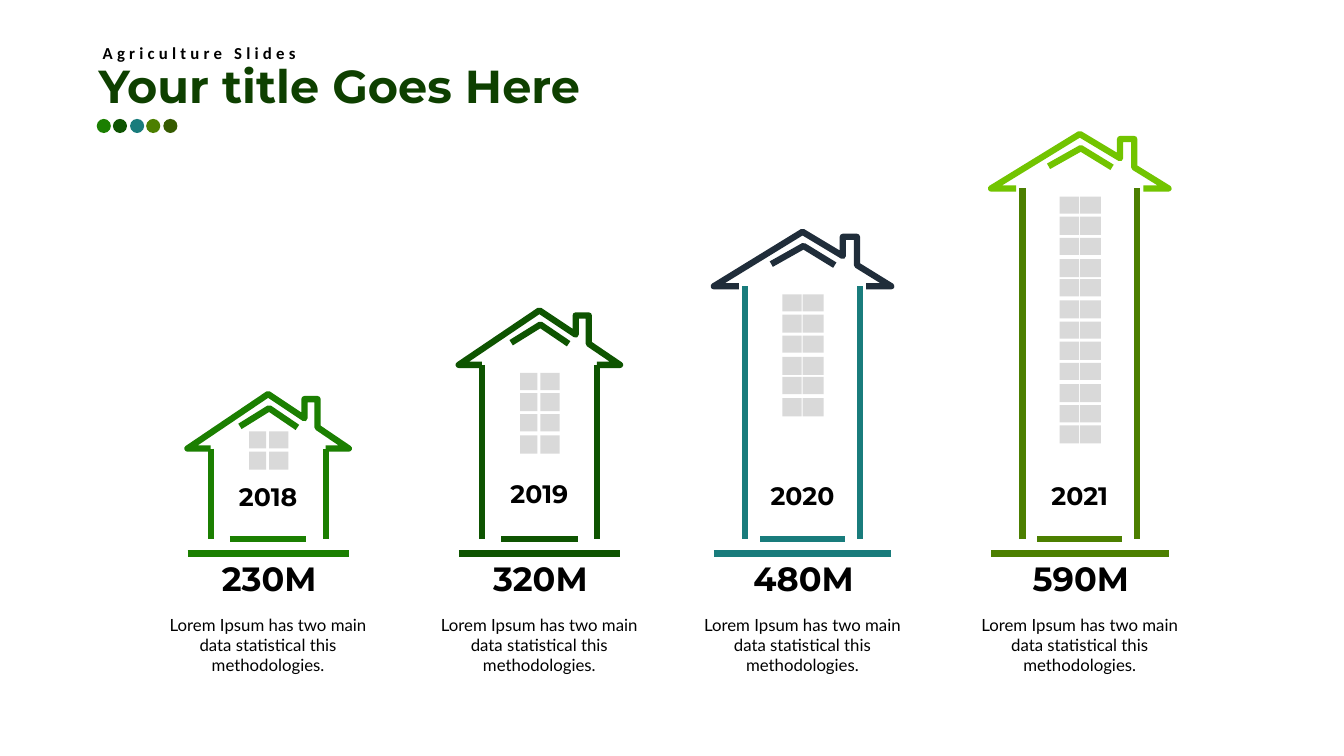
from dataclasses import dataclass

from lxml import etree
from pptx import Presentation
from pptx import util as u
from pptx.dml.color import RGBColor
from pptx.enum import shapes, text
from pptx.oxml import ns

SCALE = 9144  # EMU in one px, 100 px to the inch


@dataclass(frozen=True)
class Theme:
    ink: str = "000000"
    title: str = "0E4000"
    pane: str = "D9D9D9"
    dots: tuple[str, ...] = ("1B7F01", "0E5401", "197C7C", "4C7F00", "355B00")
    head: str = "Montserrat"
    body: str = "Lato"
    label: str = "Calibri"
    big: int = 33
    amount: int = 24
    year: int = 18
    small: int = 12
    stroke: float = 4.5


@dataclass(frozen=True)
class House:
    year: str
    amount: str
    mid: int      # centre line
    eave: int     # foot of the roof
    wall: str
    roof: str
    rows: int     # rows of windows
    top: int      # first row of windows
    year_y: int
    girth: int    # roof and base width in percent
    panes: tuple[tuple[int, int], ...]  # left offset and width


THEME = Theme()
SLIM = ((-19, 17), (1, 19))
WIDE = ((-20, 19), (0, 21))
HOUSES = (
    House("2018", "230M", 266, 445, "1B7F01", "1B7F01", 2, 428, 473, 100, SLIM),
    House("2019", "320M", 535, 362, "0E5401", "0E5401", 4, 370, 470, 100, SLIM),
    House("2020", "480M", 796, 284, "197C7C", "202D3A", 6, 292, 472, 110, WIDE),
    House("2021", "590M", 1071, 187, "4C7F00", "72C400", 12, 195, 472, 110, WIDE),
)
CAPTION = "Lorem Ipsum has two main data statistical this methodologies."

# Outlines measured from the centre line and the eave
ROOF = ((57, 0), (80, 0), (49, -21), (49, -49), (36, -49), (36, -30),
        (0, -54), (-80, 0), (-57, 0))
RAFTER = ((-28, -22), (1, -40), (29, -21))
WALL, BASE, STEP = 57, 80, 38
BASE_Y, STEP_Y = 549, 535

deck = Presentation()
deck.slide_width, deck.slide_height = u.Emu(1333 * SCALE), u.Emu(750 * SCALE)
slide = deck.slides.add_slide(deck.slide_layouts[6])


def px(*vals: int) -> list[u.Emu]:
    return [u.Emu(val * SCALE) for val in vals]


def paint(line, hue: str) -> None:
    line.color.rgb = RGBColor.from_string(hue)
    line.width = u.Pt(THEME.stroke)


def rule(x1: int, y1: int, x2: int, y2: int, hue: str) -> None:
    line = slide.shapes.add_connector(shapes.MSO_CONNECTOR.STRAIGHT, *px(x1, y1, x2, y2))
    paint(line.line, hue)
    etree.SubElement(line._element.spPr, ns.qn("a:effectLst"))


def trace(points: tuple[tuple[int, int], ...], house: House) -> None:
    spots = [(house.mid + round(x * house.girth / 100), house.eave + y) for x, y in points]
    pen = slide.shapes.build_freeform(*spots[0], scale=SCALE)
    pen.add_line_segments(spots[1:], close=False)
    shape = pen.convert_to_shape()
    shape.shadow.inherit = False
    shape.fill.background()
    paint(shape.line, house.roof)


def block(kind: shapes.MSO_SHAPE, x: int, y: int, w: int, h: int, hue: str) -> None:
    shape = slide.shapes.add_shape(kind, *px(x, y, w, h))
    shape.shadow.inherit = False
    shape.fill.solid()
    shape.fill.fore_color.rgb = RGBColor.from_string(hue)
    shape.line.fill.background()


def write(words: str, x: int, y: int, w: int, h: int, face: str, size: int, *,
          bold: bool = True, hue: str = THEME.ink, wrap: bool = False,
          mid: bool = True, gap: int = 0) -> None:
    frame = slide.shapes.add_textbox(*px(x, y, w, h)).text_frame
    frame.word_wrap = wrap
    frame.auto_size = text.MSO_AUTO_SIZE.SHAPE_TO_FIT_TEXT
    para = frame.paragraphs[0]
    para.alignment = text.PP_ALIGN.CENTER if mid else text.PP_ALIGN.LEFT
    run = para.add_run()
    run.text = words
    if gap:
        run._r.get_or_add_rPr().set("spc", str(gap * 100))
    font = para.font
    font.name, font.size, font.bold = face, u.Pt(size), bold
    font.color.rgb = RGBColor.from_string(hue)


def build(house: House) -> None:
    mid, eave = house.mid, house.eave
    # Walls and roof
    for side in (-WALL, WALL):
        rule(mid + side, eave, mid + side, STEP_Y, house.wall)
    trace(ROOF, house)
    trace(RAFTER, house)
    # Ground and doorstep
    for half, y in ((BASE, BASE_Y), (STEP, STEP_Y)):
        reach = round(half * house.girth / 100)
        rule(mid - reach, y, mid + reach, y, house.wall)
    # Windows
    for row in range(house.rows):
        for left, wide in house.panes:
            block(shapes.MSO_SHAPE.RECTANGLE, mid + left, house.top + row * 207 // 10,
                  wide, 17 + row % 2, THEME.pane)
    # Labels
    write(house.year, mid - 50, house.year_y, 100, 40, THEME.head, THEME.year)
    write(house.amount, mid - 69, 549, 140, 50, THEME.head, THEME.amount)
    write(CAPTION, mid - 125, 605, 250, 50, THEME.body, THEME.small, bold=False, wrap=True)


def main() -> None:
    for house in HOUSES:
        build(house)
    # Heading
    for i, hue in enumerate(THEME.dots):
        block(shapes.MSO_SHAPE.OVAL, 96 + i * 33 // 2, 118, 14, 14, hue)
    write("Your title Goes Here", 88, 52, 515, 66, THEME.head, THEME.big,
          hue=THEME.title, mid=False)
    write("Agriculture Slides", 92, 37, 218, 30, THEME.label, THEME.small,
          mid=False, gap=3)
    deck.save("out.pptx")


if __name__ == "__main__":
    main()
